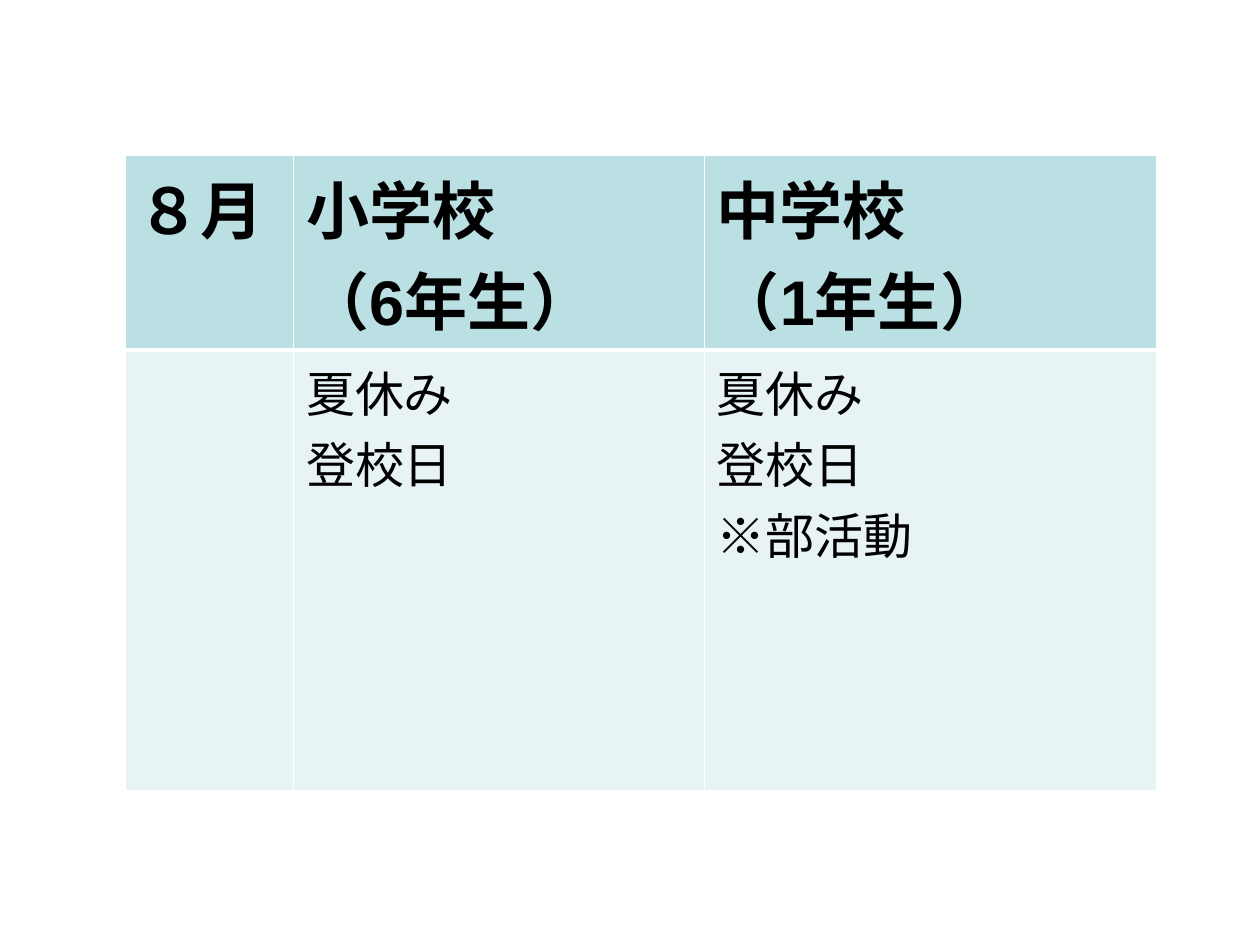
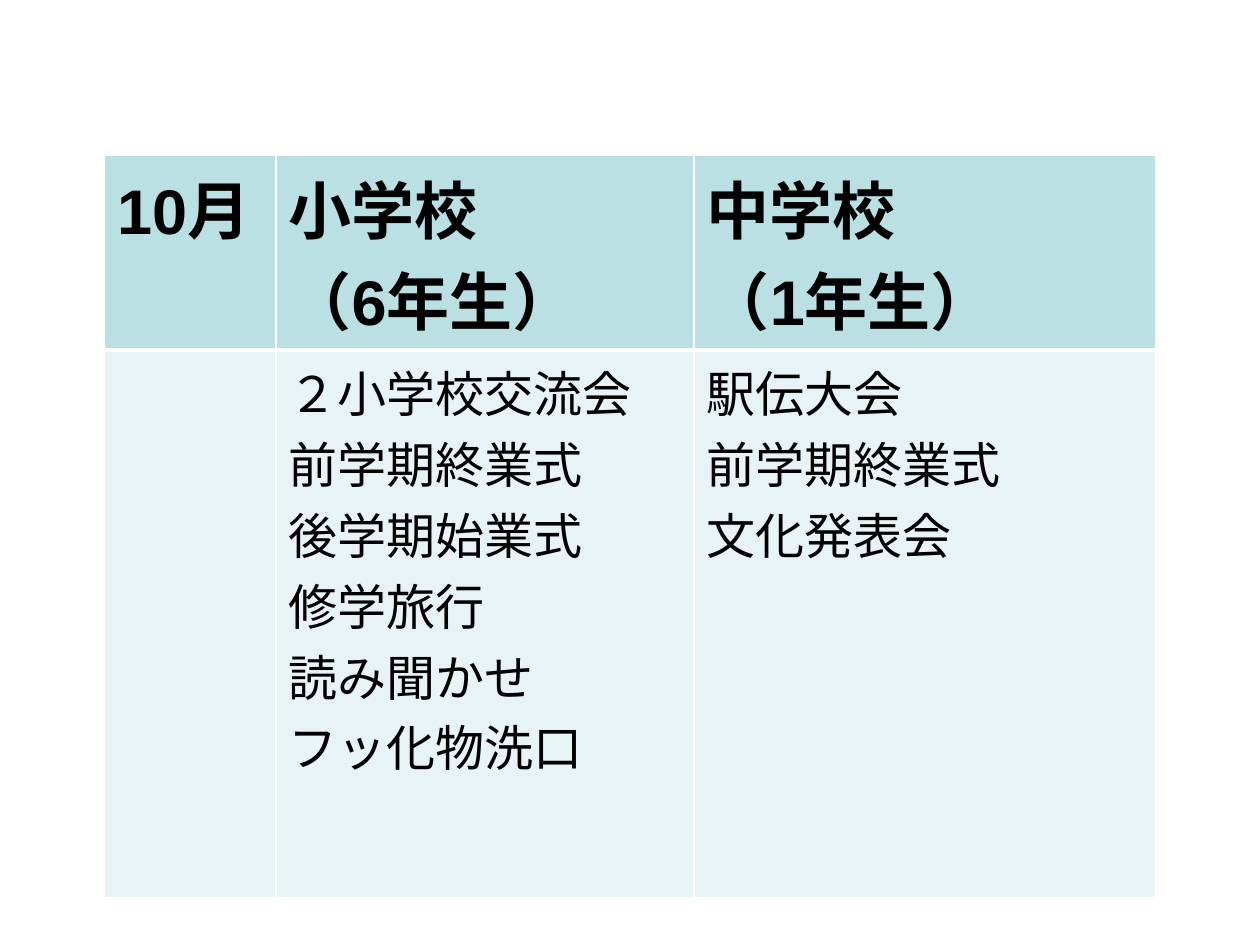
from dataclasses import dataclass

from lxml import etree
from pptx import Presentation
from pptx.dml.color import RGBColor
from pptx.enum import lang
from pptx.oxml import ns
from pptx.util import Inches, Pt

FONT = "Arial"
INK = "000000"
RULE = "FFFFFF"
TOP = 1.23
HEAD_H = 1.53
THICK, THIN = 3, 1


@dataclass(frozen=True)
class Band:
    fill: str
    size: int
    bold: bool
    top: int
    base: int


HEAD = Band("BBE0E3", 36, True, THIN, THICK)
BODY = Band("E7F3F4", 28, False, THICK, THIN)


@dataclass(frozen=True)
class Month:
    name: str
    left: float
    cols: tuple[float, ...]
    height: float
    junior: tuple[str, ...]
    middle: tuple[str, ...]


MONTHS = (
    Month("８月", 0.99, (1.34, 3.26, 3.59), 3.5,
          ("夏休み", "登校日"),
          ("夏休み", "登校日", "※部活動")),
    Month("10月", 0.83, (1.36, 3.32, 3.66), 4.35,
          ("２小学校交流会", "前学期終業式", "後学期始業式",
           "修学旅行", "読み聞かせ", "フッ化物洗口"),
          ("駅伝大会", "前学期終業式", "文化発表会")),
)


def color(code: str) -> RGBColor:
    return RGBColor.from_string(code)


def add_edges(cell, band: Band) -> None:
    props = cell._tc.get_or_add_tcPr()
    sides = {"lnL": THIN, "lnR": THIN, "lnT": band.top, "lnB": band.base}
    for spot, (side, width) in enumerate(sides.items()):
        line = etree.Element(ns.qn(f"a:{side}"), w=str(Pt(width)))
        fill = etree.SubElement(line, ns.qn("a:solidFill"))
        etree.SubElement(fill, ns.qn("a:srgbClr"), val=RULE)
        props.insert(spot, line)


def fill_cell(cell, lines: tuple[str, ...], band: Band) -> None:
    cell.fill.solid()
    cell.fill.fore_color.rgb = color(band.fill)
    add_edges(cell, band)
    frame = cell.text_frame
    for spot, line in enumerate(lines):
        para = frame.add_paragraph() if spot else frame.paragraphs[0]
        run = para.add_run()
        run.text = line
        font = run.font
        font.name = FONT
        font.size = Pt(band.size)
        font.bold = band.bold
        font.color.rgb = color(INK)
        font.language_id = lang.MSO_LANGUAGE_ID.JAPANESE


def add_month(deck, month: Month) -> None:
    slide = deck.slides.add_slide(deck.slide_layouts[6])
    rows = (
        (HEAD, HEAD_H, ((month.name,), ("小学校", "（6年生）"), ("中学校", "（1年生）"))),
        (BODY, month.height, ((), month.junior, month.middle)),
    )
    grid = slide.shapes.add_table(
        len(rows), len(month.cols), Inches(month.left), Inches(TOP),
        Inches(sum(month.cols)), Inches(HEAD_H + month.height)).table
    grid.first_row = grid.horz_banding = False
    for col, width in zip(grid.columns, month.cols):
        col.width = Inches(width)
    for row, (band, height, texts) in zip(grid.rows, rows):
        row.height = Inches(height)
        for cell, lines in zip(row.cells, texts):
            fill_cell(cell, lines, band)


def main() -> None:
    deck = Presentation()
    deck.slide_width, deck.slide_height = Inches(10), Inches(7.5)
    for month in MONTHS:
        add_month(deck, month)
    deck.save("out.pptx")


if __name__ == "__main__":
    main()
